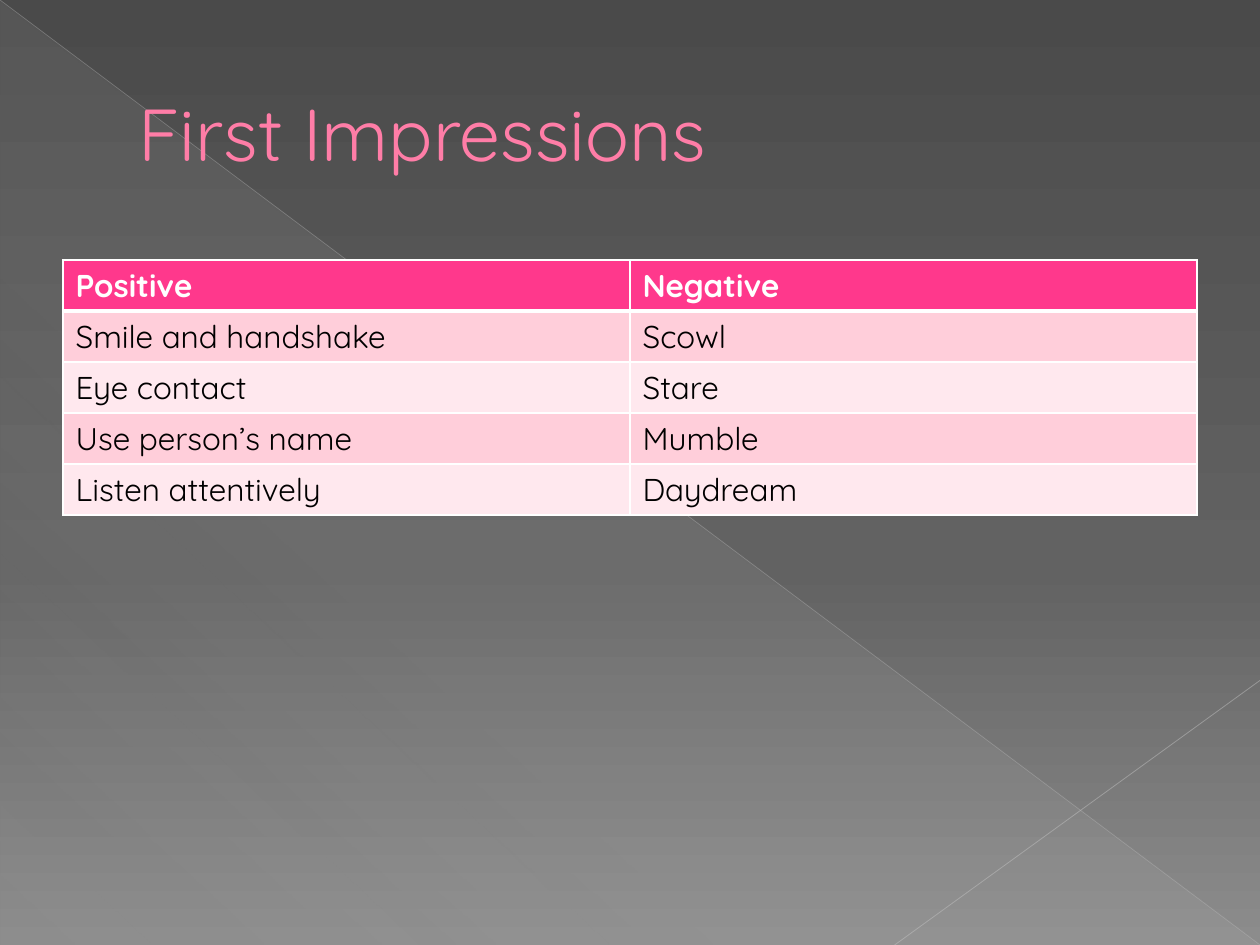
import pptx
import pptx.dml.color
import pptx.enum.shapes
import pptx.enum.text
import pptx.oxml
import pptx.oxml.ns
import pptx.util

RGB = pptx.dml.color.RGBColor
WHITE = RGB(0xFF, 0xFF, 0xFF)
BLACK = RGB(0x00, 0x00, 0x00)
TITLE_PINK = RGB(0xFF, 0x7D, 0xA7)
HEADER_PINK = RGB(0xFF, 0x38, 0x8C)
BANDS = (RGB(0xFF, 0xCE, 0xDA), RGB(0xFF, 0xE8, 0xEE))
BG_TOP = RGB(0x4A, 0x4A, 0x4A)
BG_MIDDLE = RGB(0x62, 0x62, 0x62)
BG_BOTTOM = RGB(0x8C, 0x8C, 0x8C)
SHEEN = RGB(0xD2, 0xD2, 0xD2)
LONG_LINE = RGB(0xBF, 0xBF, 0xBF)
SHORT_LINE = RGB(0xC6, 0xC6, 0xC6)

WIDTH, HEIGHT = pptx.util.Inches(10), pptx.util.Inches(7.5)
ROWS = [
    ("Positive", "Negative"),
    ("Smile and handshake", "Scowl"),
    ("Eye contact", "Stare"),
    ("Use person’s name", "Mumble"),
    ("Listen attentively", "Daydream"),
]


def add_xml(parent, tag, **attributes):
    child = pptx.oxml.parse_xml(f'<a:{tag} {pptx.oxml.ns.nsdecls("a")}/>')
    for name, value in attributes.items():
        child.set(name, str(value))
    parent.append(child)
    return child


def add_color(parent, color, opacity=100):
    clr = add_xml(parent, "srgbClr", val=color)
    if opacity < 100:
        add_xml(clr, "alpha", val=opacity * 1000)


class SlideBuilder:
    """Holds the style and the current slide; lengths are shares of the slide's size."""

    font = "Quicksand"

    def __init__(self, prs):
        self.s = prs.slides.add_slide(prs.slide_layouts[6])

    def place(self, x, y):
        return round(x * WIDTH), round(y * HEIGHT)

    def style_run(self, r, size, color, bold=False):
        r.font.name = self.font
        r.font.size = pptx.util.Pt(size)
        r.font.color.rgb = color
        r.font.bold = bold

    def gradient(self, owner, fill, stops, angle):
        """Fill with (position %, colour, opacity %) stops, angle clockwise in degrees."""
        fill.gradient()
        grad = next(owner.element.iter(pptx.oxml.ns.qn("a:gradFill")))
        gs_list = grad.find(pptx.oxml.ns.qn("a:gsLst"))
        for gs in list(gs_list):
            gs_list.remove(gs)
        for position, color, opacity in stops:
            add_color(add_xml(gs_list, "gs", pos=position * 1000), color, opacity)
        grad.find(pptx.oxml.ns.qn("a:lin")).set("ang", str(angle * 60000))

    def background(self, stops, angle):
        self.gradient(self.s, self.s.background.fill, stops, angle)

    def triangle(self, x, y, w, h, stops, angle):
        kind = pptx.enum.shapes.MSO_SHAPE.RIGHT_TRIANGLE
        sp = self.s.shapes.add_shape(kind, *self.place(x, y), *self.place(w, h))
        sp.shadow.inherit = False
        sp.line.fill.background()
        self.gradient(sp, sp.fill, stops, angle)

    def line(self, start, end, color, width, opacity):
        kind = pptx.enum.shapes.MSO_CONNECTOR.STRAIGHT
        cn = self.s.shapes.add_connector(kind, *self.place(*start), *self.place(*end))
        cn.line.width = pptx.util.Pt(width)
        cn.line.color.rgb = color
        clr = next(cn.element.iter(pptx.oxml.ns.qn("a:srgbClr")))
        add_xml(clr, "alpha", val=opacity * 1000)
        add_xml(cn.element.spPr, "effectLst")

    def title(self, text, x, y, w, h, indent):
        tf = self.s.shapes.add_textbox(*self.place(x, y), *self.place(w, h)).text_frame
        tf.word_wrap = True
        tf.vertical_anchor = pptx.enum.text.MSO_ANCHOR.MIDDLE
        tf.text = text
        p = tf.paragraphs[0]
        p_pr = p._p.get_or_add_pPr()
        p_pr.set("marL", str(round(indent * WIDTH)))
        p_pr.set("indent", "0")
        self.style_run(p.runs[0], 42, TITLE_PINK)

    def borders(self, cell, **widths):
        tc_pr = cell._tc.get_or_add_tcPr()
        for side in "LRTB":
            width = pptx.util.Pt(widths.get(side, 1))
            ln = add_xml(tc_pr, f"ln{side}", w=int(width))
            add_color(add_xml(ln, "solidFill"), WHITE)

    def table(self, rows, x, y, w, h):
        shape = self.s.shapes.add_table(
            len(rows), len(rows[0]), *self.place(x, y), *self.place(w, h))
        for i, texts in enumerate(rows):
            header = i == 0
            for j, text in enumerate(texts):
                cell = shape.table.cell(i, j)
                cell.text = text
                r = cell.text_frame.paragraphs[0].runs[0]
                self.style_run(r, 18, WHITE if header else BLACK, header)
                self.borders(cell, T=3 if i == 1 else 1, B=3 if header else 1)
                cell.fill.solid()
                cell.fill.fore_color.rgb = HEADER_PINK if header else BANDS[(i - 1) % 2]


def main():
    prs = pptx.Presentation()
    prs.slide_width, prs.slide_height = WIDTH, HEIGHT
    slide = SlideBuilder(prs)
    slide.background(
        [(0, BG_TOP, 100), (60, BG_MIDDLE, 100), (100, BG_BOTTOM, 100)], 90)
    slide.triangle(0, 0, 1, 1, [(0, SHEEN, 10), (70, SHEEN, 8), (100, SHEEN, 1)], 133)
    slide.line((0, 0), (1, 1), LONG_LINE, 0.39, 35)
    slide.line((1, 0.72), (0.71, 1), SHORT_LINE, 0.47, 45)
    slide.title("First Impressions", 0.05, 0.04, 0.9, 0.2, indent=0.05)
    slide.table(ROWS, 0.05, 0.275, 0.9, 0.27)
    prs.save("out.pptx")


if __name__ == "__main__":
    main()
